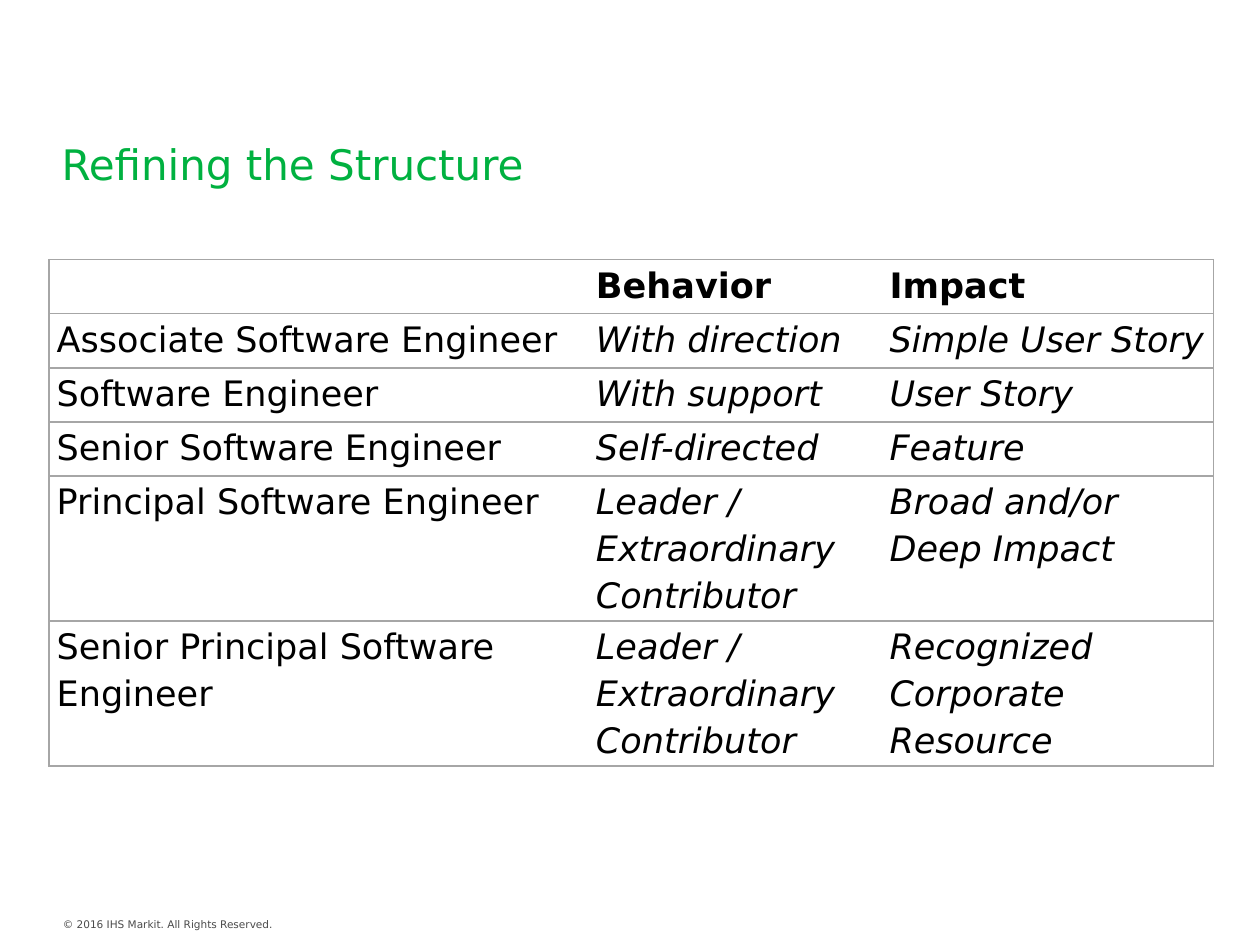
from dataclasses import dataclass

from lxml import etree
from pptx import Presentation
from pptx import util as u
from pptx.dml.color import RGBColor
from pptx.enum import text
from pptx.oxml.ns import qn

# Content
TITLE = "Refining the Structure"
FOOTER = "© 2016 IHS Markit. All Rights Reserved."
HEADER = ("", "Behavior", "Impact")
LEVELS = [
    ("Associate Software Engineer", "With direction", "Simple User Story"),
    ("Software Engineer", "With support", "User Story"),
    ("Senior Software Engineer", "Self-directed", "Feature"),
    ("Principal Software Engineer", "Leader / Extraordinary Contributor",
     "Broad and/or Deep Impact"),
    ("Senior Principal Software Engineer", "Leader / Extraordinary Contributor",
     "Recognized Corporate Resource"),
]


@dataclass(frozen=True)
class Theme:
    font: str = "DejaVu Sans"
    title: str = "00B140"
    body: str = "000000"
    footer: str = "4B4B4B"
    border: str = "A6A6A6"
    title_pt: int = 24
    body_pt: int = 20
    footer_pt: int = 6
    border_pt: int = 1


T = Theme()

# Layout, in inches
LEFT, WIDTH = 0.39, 9.25
TABLE_TOP = 2.06
COLS = (4.28, 2.33, 2.63)
ROW_H = 0.43  # rows with longer text grow to fit


def add_run(p, words, size, color, bold=False, italic=False):
    r = p.add_run()
    r.text = words
    f = r.font
    f.name, f.size, f.bold, f.italic = T.font, u.Pt(size), bold, italic
    f.color.rgb = RGBColor.from_string(color)


def add_text(s, box, words, size, color, wrap):
    tf = s.shapes.add_textbox(*map(u.Inches, box)).text_frame
    tf.word_wrap = wrap
    tf.vertical_anchor = text.MSO_ANCHOR.TOP
    add_run(tf.paragraphs[0], words, size, color)


def set_borders(cell):
    pr = cell._tc.get_or_add_tcPr()
    for i, side in enumerate(("lnL", "lnR", "lnT", "lnB")):
        ln = etree.Element(qn("a:" + side), w=str(u.Pt(T.border_pt)))
        if side in sides_for(cell):
            fill = etree.SubElement(ln, qn("a:solidFill"))
            etree.SubElement(fill, qn("a:srgbClr"), val=T.border)
        else:
            etree.SubElement(ln, qn("a:noFill"))
        pr.insert(i, ln)


def sides_for(cell):
    """Horizontal rules everywhere, vertical ones only at the outer edges."""
    col = cell._tc.col_idx
    outer = {0: ("lnL",), len(COLS) - 1: ("lnR",)}
    return ("lnT", "lnB") + outer.get(col, ())


def add_levels_table(s):
    rows = [HEADER, *LEVELS]
    table = s.shapes.add_table(
        len(rows), len(COLS), u.Inches(LEFT), u.Inches(TABLE_TOP),
        u.Inches(WIDTH), u.Inches(ROW_H * len(rows))).table
    table.first_row = table.horz_banding = False
    for column, width in zip(table.columns, COLS):
        column.width = u.Inches(width)
    for i, values in enumerate(rows):
        table.rows[i].height = u.Inches(ROW_H)
        for j, value in enumerate(values):
            cell = table.cell(i, j)
            cell.fill.background()
            cell.margin_left = cell.margin_right = u.Inches(0.06)
            cell.margin_top = cell.margin_bottom = 0
            set_borders(cell)
            p = cell.text_frame.paragraphs[0]
            p.line_spacing = 1.15
            if value:
                add_run(p, value, T.body_pt, T.body,
                        bold=i == 0, italic=i > 0 and j > 0)


def main():
    prs = Presentation()
    prs.slide_width, prs.slide_height = u.Inches(10), u.Inches(7.5)
    s = prs.slides.add_slide(prs.slide_layouts[6])
    # Footer, title, table
    add_text(s, (0.4, 7.24, 1.92, 0.2), FOOTER, T.footer_pt, T.footer, False)
    add_text(s, (LEFT, 1.05, WIDTH, 0.5), TITLE, T.title_pt, T.title, True)
    add_levels_table(s)
    prs.save("out.pptx")


if __name__ == "__main__":
    main()
